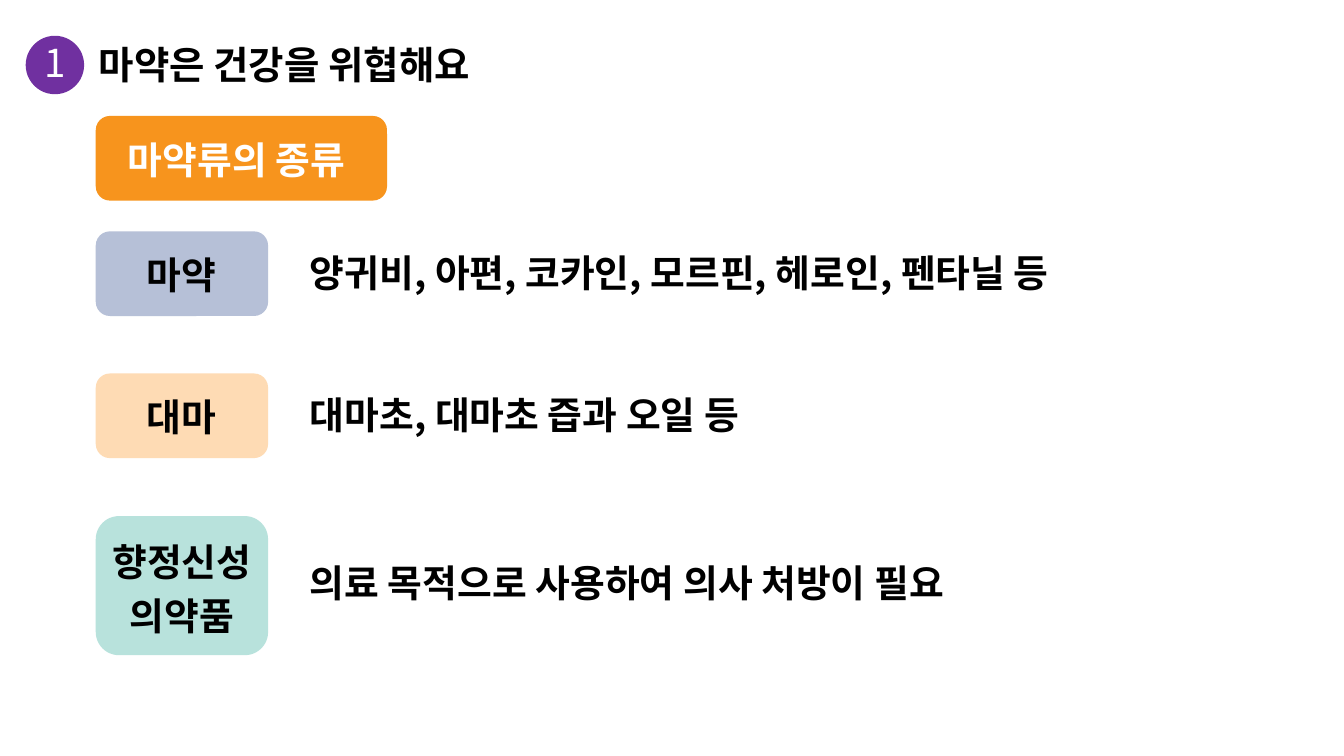
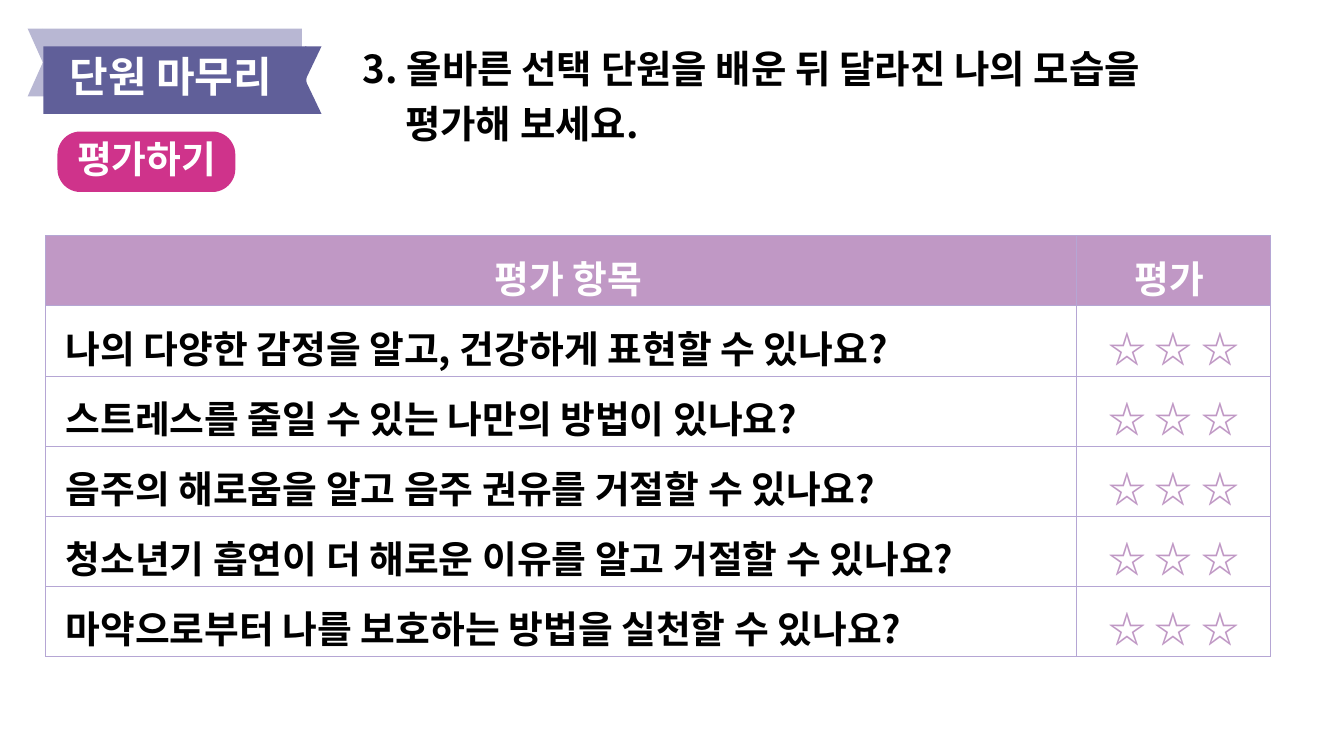
import pptx
import pptx.util
import pptx.dml.color
import pptx.enum.shapes
import pptx.enum.text
import pptx.oxml
import pptx.oxml.ns
from lxml import etree

KIND = pptx.enum.shapes.MSO_SHAPE
ALIGN = pptx.enum.text.PP_ALIGN
ANCHOR = pptx.enum.text.MSO_ANCHOR
GROW = pptx.enum.text.MSO_AUTO_SIZE.SHAPE_TO_FIT_TEXT
FIXED = pptx.enum.text.MSO_AUTO_SIZE.NONE

FONT = "Noto Sans CJK KR"
SCALE = 9144  # EMU in one px, at 100 px to the inch
WIDE, HIGH = 2667, 1500
HUES = {
    "black": "000000", "white": "FFFFFF", "purple": "7030A0",
    "orange": "F7941D", "blue": "B6C0D7", "peach": "FEDBB4",
    "mint": "B8E2DC", "mauve": "C098C5", "rule": "B5A6D4",
    "pink": "CF338B", "pale": "B8B7D3", "indigo": "605F99",
}

# Slide 1
HEALTH = "마약은 건강을 위협해요"
KINDS = "마약류의 종류"
DRUGS = [
    # label, label box, label text box, spacing, hue, details, details box
    ("마약", (190, 459, 342, 168), (230, 494, 261, 98), None, "blue",
     "양귀비, 아편, 코카인, 모르핀, 헤로인, 펜타닐 등", (605, 472, 1599, 119)),
    ("대마", (190, 741, 342, 168), (230, 776, 261, 98), None, "peach",
     "대마초, 대마초 즙과 오일 등", (605, 755, 1599, 110)),
    ("향정신성 의약품", (190, 1024, 342, 276), (210, 1045, 302, 233), 1.2,
     "mint", "의료 목적으로 사용하여 의사 처방이 필요", (605, 1088, 1599, 110)),
]

# Slide 2
TASK = ["3. 올바른 선택 단원을 배운 뒤 달라진 나의 모습을", "평가해 보세요."]
RIBBON = [
    # preset, box, turn, hue, adjustment
    (KIND.PENTAGON, (85, 57, 514, 134), 180, "pale", 0),
    (KIND.CHEVRON, (55, 57, 60, 134), 0, "pale", None),
    (KIND.PENTAGON, (86, 92, 522, 134), 0, "indigo", 0),
    (KIND.CHEVRON, (574, 92, 64, 134), 180, "indigo", None),
]
HEAD = ("평가 항목", "평가 ")
STARS = "☆ ☆ ☆"
CHECKS = [
    "나의 다양한 감정을 알고, 건강하게 표현할 수 있나요?",
    "스트레스를 줄일 수 있는 나만의 방법이 있나요?",
    "음주의 해로움을 알고 음주 권유를 거절할 수 있나요?",
    "청소년기 흡연이 더 해로운 이유를 알고 거절할 수 있나요?",
    "마약으로부터 나를 보호하는 방법을 실천할 수 있나요?",
]
COLS = (2046, 384)
ROW = 139


def px(*nums):
    return [pptx.util.Emu(num * SCALE) for num in nums]


def rgb(hue):
    return pptx.dml.color.RGBColor.from_string(HUES[hue])


def apply(item, values):
    for name, value in values.items():
        setattr(item, name, value)


def inset(item, left=6, top=6, right=6, bottom=6):
    names = ("margin_left", "margin_top", "margin_right", "margin_bottom")
    apply(item, dict(zip(names, px(left, top, right, bottom))))


def write(frame, lines, hue="black", size=54, bold=True, align=ALIGN.LEFT,
          space=None):
    """Fill a text frame with one paragraph for each line."""
    for num, line in enumerate(lines):
        para = frame.paragraphs[0] if num == 0 else frame.add_paragraph()
        apply(para, {"alignment": align, "line_spacing": space})
        run = para.add_run()
        run.text = line
        apply(run.font, {"name": FONT, "size": pptx.util.Pt(size),
                         "bold": bold})
        run.font.color.rgb = rgb(hue)
        east = etree.SubElement(run.font._element, pptx.oxml.ns.qn("a:ea"))
        east.set("typeface", FONT)


def shape(slide, kind, box, hue, turn=0, bend=None):
    item = slide.shapes.add_shape(kind, *px(*box))
    item.shadow.inherit = False
    item.fill.solid()
    item.fill.fore_color.rgb = rgb(hue)
    item.line.fill.background()
    item.rotation = turn
    if bend is not None:
        item.adjustments[0] = bend


def text(slide, box, line, tight=True, fit=FIXED, anchor=ANCHOR.TOP,
         wrap=True, **look):
    frame = slide.shapes.add_textbox(*px(*box)).text_frame
    apply(frame, {"word_wrap": wrap, "auto_size": fit,
                  "vertical_anchor": anchor})
    if tight:
        inset(frame)
    write(frame, [line], **look)


def start(deck, lines, box, fit=FIXED, space=None):
    """Add a slide and set its title; return the slide and title frame."""
    slide = deck.slides.add_slide(deck.slide_layouts[5])
    title = slide.shapes.title
    apply(title, dict(zip(("left", "top", "width", "height"), px(*box))))
    frame = title.text_frame
    apply(frame, {"word_wrap": True, "auto_size": fit,
                  "vertical_anchor": ANCHOR.TOP})
    write(frame, lines, size=55, space=space)
    return slide, frame


def border(cell):
    props = cell._tc.get_or_add_tcPr()
    for side in "LRTB":
        props.append(pptx.oxml.parse_xml(
            f'<a:ln{side} {pptx.oxml.ns.nsdecls("a")} w="19050"><a:solidFill>'
            f'<a:srgbClr val="{HUES["rule"]}"/></a:solidFill></a:ln{side}>'))


def drugs(deck):
    slide, frame = start(deck, [HEALTH], (190, 75, 1506, 75))
    inset(frame)
    shape(slide, KIND.OVAL, (51, 71, 116, 116), "purple")
    text(slide, (71, 81, 77, 95), "1", fit=GROW, anchor=ANCHOR.MIDDLE,
         hue="white", size=55, bold=False, align=ALIGN.CENTER, space=0.9)
    shape(slide, KIND.ROUNDED_RECTANGLE, (190, 230, 578, 168), "orange")
    text(slide, (230, 265, 478, 98), KINDS, hue="white", align=ALIGN.CENTER)
    for label, back, box, space, hue, details, area in DRUGS:
        shape(slide, KIND.ROUNDED_RECTANGLE, back, hue)
        text(slide, box, label, align=ALIGN.CENTER, space=space)
        text(slide, area, details, tight=False, fit=GROW, space=1.2)


def grid(slide):
    rows = [HEAD] + [(check, STARS) for check in CHECKS]
    frame = slide.shapes.add_table(
        len(rows), len(COLS), *px(91, 468, sum(COLS), ROW * len(rows)))
    table = frame.table
    apply(table, {"first_row": False, "horz_banding": False})
    for col, wide in zip(table.columns, px(*COLS)):
        col.width = wide
    for r, row in enumerate(rows):
        table.rows[r].height = px(ROW)[0]
        for c, line in enumerate(row):
            cell = table.cell(r, c)
            border(cell)
            cell.fill.solid()
            cell.fill.fore_color.rgb = rgb("white" if r else "mauve")
            cell.vertical_anchor = ANCHOR.MIDDLE
            inset(cell, 10 if c else 39, 5, 10, 5)
            hue = ("mauve" if c else "black") if r else "white"
            align = ALIGN.LEFT if r and not c else ALIGN.CENTER
            write(cell.text_frame, [line], hue, align=align, space=1.2)


def review(deck):
    slide, frame = start(deck, TASK, (710, 66, 1714, 232), GROW, 1.2)
    frame.paragraphs[1]._p.get_or_add_pPr().set("marL", str(84 * SCALE))
    grid(slide)
    shape(slide, KIND.ROUNDED_RECTANGLE, (114, 261, 353, 120), "pink",
          bend=0.38)
    text(slide, (143, 274, 296, 93), "평가하기", fit=GROW, wrap=False,
         anchor=ANCHOR.MIDDLE, hue="white", align=ALIGN.CENTER, space=0.9)
    for kind, box, turn, hue, bend in RIBBON:
        shape(slide, kind, box, hue, turn, bend)
    text(slide, (128, 107, 441, 101), "단원 마무리", tight=False, fit=GROW,
         hue="white", size=60, space=0.9)


def main():
    deck = pptx.Presentation()
    deck.slide_width, deck.slide_height = px(WIDE, HIGH)
    drugs(deck)
    review(deck)
    deck.save("out.pptx")


if __name__ == "__main__":
    main()
